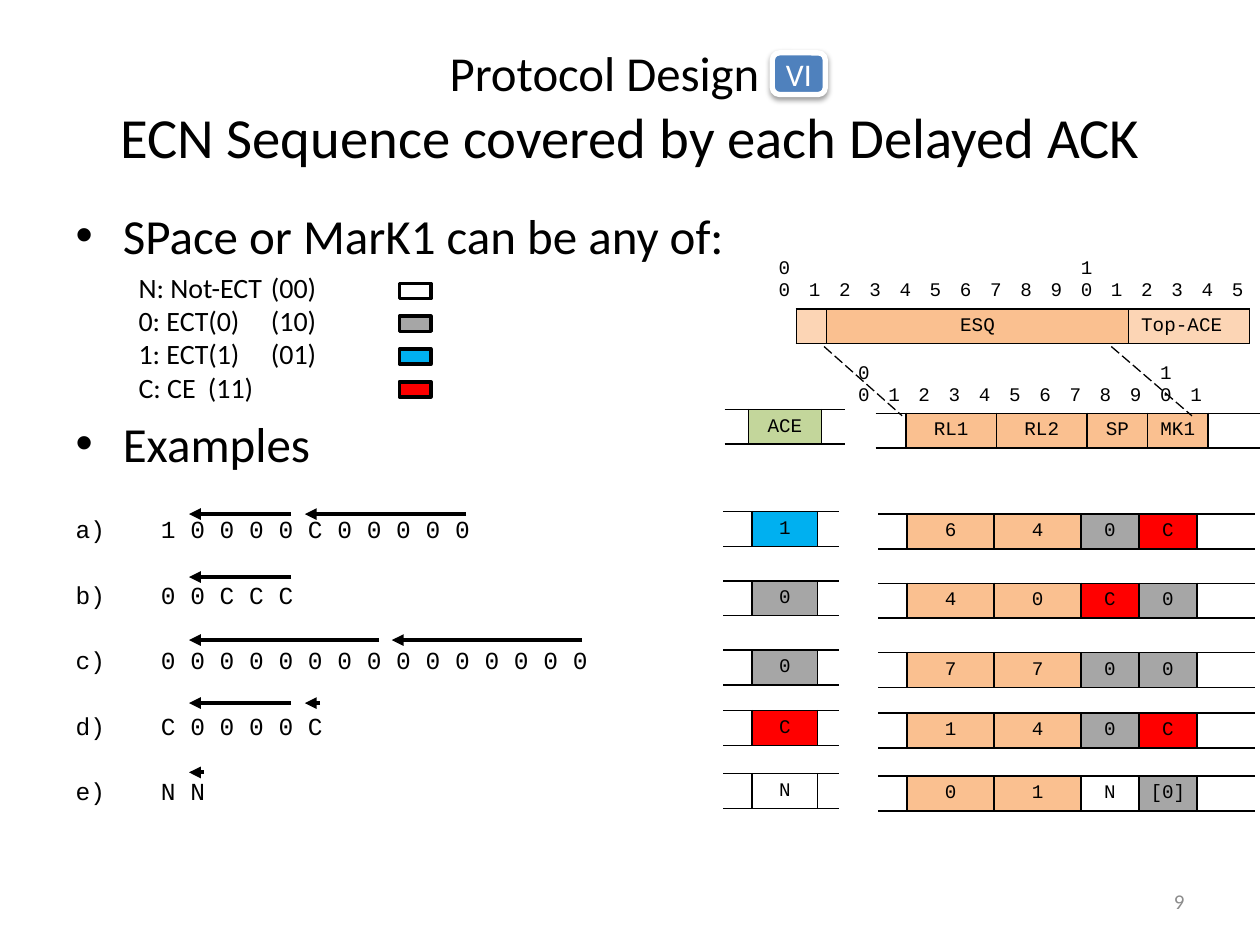
from dataclasses import dataclass

from lxml.etree import SubElement
from pptx import Presentation
from pptx.dml.color import RGBColor
from pptx.enum.dml import MSO_LINE
from pptx.enum.shapes import MSO_CONNECTOR, MSO_SHAPE
from pptx.enum.text import MSO_ANCHOR, MSO_AUTO_SIZE, PP_ALIGN
from pptx.oxml.ns import qn
from pptx.util import Inches, Pt

BLACK = RGBColor(0x00, 0x00, 0x00)
WHITE = RGBColor(0xFF, 0xFF, 0xFF)
GRAY = RGBColor(0xA6, 0xA6, 0xA6)
NUMBER_GRAY = RGBColor(0x8C, 0x8C, 0x8C)
BLUE = RGBColor(0x00, 0xB0, 0xF0)
RED = RGBColor(0xFF, 0x00, 0x00)
ORANGE = RGBColor(0xFA, 0xC0, 0x90)
PALE_ORANGE = RGBColor(0xFC, 0xD5, 0xB5)
GREEN = RGBColor(0xC3, 0xD6, 0x9B)
BADGE_BLUE = RGBColor(0x4F, 0x81, 0xBD)

COLUMNS, ROWS = 100, 75
PLAIN_TABLE = "{2D5ABB26-0587-4C30-8999-92F81FD0307C}"
MARK_COLORS = {"N": WHITE, "0": GRAY, "1": BLUE, "C": RED, "[0]": GRAY}
LEGEND = [("N: Not-ECT", "00", "N"), ("0: ECT(0)", "10", "0"),
          ("1: ECT(1)", "01", "1"), ("C: CE", "11", "C")]
EXAMPLES = [
    ("1 0 0 0 0 C 0 0 0 0 0", "1", ("6", "4", "0", "C"), 40.8, 40.8,
     [(37, 24.2), (23.1, 15)]),
    ("0 0 C C C", "0", ("4", "0", "C", "0"), 46.3, 45.8, [(23.1, 15)]),
    ("0 0 0 0 0 0 0 0 0 0 0 0 0 0 0", "0", ("7", "7", "0", "0"), 51.8, 50.8,
     [(46.2, 31.1), (30.1, 15)]),
    ("C 0 0 0 0 C", "C", ("1", "4", "0", "C"), 56.6, 55.8,
     [(23.1, 15), (25.4, 24.2)]),
    ("N N", "N", ("0", "1", "N", "[0]"), 61.6, 61.3, [(16.2, 15)]),
]


def apply(target, values):
    for name, value in values.items():
        setattr(target, name, value)


@dataclass
class Field:
    text: str = ""
    fill: RGBColor = None
    borders: str = ""
    span: int = 1
    align: PP_ALIGN = PP_ALIGN.CENTER
    anchor: MSO_ANCHOR = MSO_ANCHOR.TOP
    side_margin: float = 0.05


class ProtocolSlide:
    sans = "Calibri"
    mono = "Courier New"
    mono_size = 11

    def __init__(self, deck):
        self.slide = deck.slides.add_slide(deck.slide_layouts[1])
        self.column = deck.slide_width / COLUMNS
        self.row = deck.slide_height / ROWS

    def place(self, left, top, width, height):
        return (round(left * self.column), round(top * self.row),
                round(width * self.column), round(height * self.row))

    def add_text(self, paragraph, text, size, font=None, color=BLACK, **layout):
        run = paragraph.add_run()
        run.text = text
        apply(run.font, {"name": font or self.sans, "size": Pt(size)})
        run.font.color.rgb = color
        apply(paragraph, layout)

    def paragraphs(self, holder, area, lines):
        apply(holder, dict(zip(("left", "top", "width", "height"), self.place(*area))))
        frame = holder.text_frame
        apply(frame, {"auto_size": MSO_AUTO_SIZE.NONE, "word_wrap": True})
        for index, (text, size, options) in enumerate(lines):
            paragraph = frame.add_paragraph() if index else frame.paragraphs[0]
            self.add_text(paragraph, text, size, **options)
        return frame

    def indent(self, paragraph, hang, bullet, **settings):
        properties = paragraph._p.get_or_add_pPr()
        properties.set("marL", str(Inches(hang)))
        properties.set("indent", str(-Inches(hang)))
        SubElement(properties, qn(bullet), **settings)

    def label(self, area, text, size, color, align):
        box = self.slide.shapes.add_textbox(*self.place(*area))
        frame = self.paragraphs(box, area, [(text, size, {"color": color, "alignment": align})])
        frame.vertical_anchor = MSO_ANCHOR.MIDDLE

    def box(self, kind, area, fill, line, weight):
        shape = self.slide.shapes.add_shape(kind, *self.place(*area))
        shape.shadow.inherit = False
        shape.fill.solid()
        shape.fill.fore_color.rgb = fill
        shape.line.color.rgb = line
        shape.line.width = Pt(weight)
        return shape

    def badge(self, area, text):
        badge = self.box(MSO_SHAPE.ROUNDED_RECTANGLE, area, BADGE_BLUE, WHITE, 3)
        apply(badge.text_frame, {"word_wrap": False, "vertical_anchor": MSO_ANCHOR.MIDDLE})
        self.add_text(badge.text_frame.paragraphs[0], text, 18, color=WHITE,
                      alignment=PP_ALIGN.CENTER)
        effects = badge._element.spPr.find(qn("a:effectLst"))
        shadow = SubElement(effects, qn("a:outerShdw"), blurRad=str(Pt(3.1)),
                            dist=str(Pt(1.6)), dir="5400000", rotWithShape="0")
        tint = SubElement(shadow, qn("a:srgbClr"), val=str(BLACK))
        SubElement(tint, qn("a:alpha"), val="38000")

    def line(self, start, end, weight, dash=None, arrow=False):
        connector = self.slide.shapes.add_connector(
            MSO_CONNECTOR.STRAIGHT, *self.place(*start, *end))
        connector.line.color.rgb = BLACK
        apply(connector.line, {"width": Pt(weight), "dash_style": dash})
        if arrow:
            SubElement(connector.line._get_or_add_ln(), qn("a:tailEnd"), type="triangle")
        SubElement(connector._element.spPr, qn("a:effectLst"))

    def fill_field(self, cell, field):
        margin = Inches(field.side_margin)
        apply(cell, {"margin_left": margin, "margin_right": margin,
                     "vertical_anchor": field.anchor})
        paragraph = cell.text_frame.paragraphs[0]
        if field.text:
            self.add_text(paragraph, field.text, self.mono_size, self.mono,
                          alignment=field.align)
        else:
            SubElement(paragraph._p, qn("a:endParaRPr"), sz="1000")
        properties = cell._tc.get_or_add_tcPr()
        for side in "lrtb":
            if side in field.borders:
                border = SubElement(properties, qn(f"a:ln{side.upper()}"), w=str(Pt(1)))
                ink = SubElement(border, qn("a:solidFill"))
                SubElement(ink, qn("a:srgbClr"), val=str(BLACK))
        if field.fill is None:
            cell.fill.background()
        else:
            cell.fill.solid()
            cell.fill.fore_color.rgb = field.fill

    def table(self, left, top, widths, heights, rows):
        area = self.place(left, top, sum(widths), sum(heights))
        table = self.slide.shapes.add_table(len(heights), len(widths), *area).table
        apply(table, {"first_row": False, "horz_banding": False})
        table._tbl.tblPr.find(qn("a:tableStyleId")).text = PLAIN_TABLE
        for column, width in zip(table.columns, widths):
            column.width = round(width * self.column)
        for line, height in zip(table.rows, heights):
            line.height = round(height * self.row)
        for index, fields in enumerate(rows):
            position = 0
            for field in fields:
                cell = table.cell(index, position)
                if field.span > 1:
                    cell.merge(table.cell(index, position + field.span - 1))
                self.fill_field(cell, field)
                position += field.span

    def bit_ruler(self, left, top, bits, count, fields):
        header = [Field(f"{bit // 10}{bit % 10}" if bit % 10 == 0 else str(bit % 10),
                        borders="b" if bit else "", align=PP_ALIGN.LEFT,
                        anchor=MSO_ANCHOR.BOTTOM, side_margin=0.1)
                  if bit < bits else Field(borders="b") for bit in range(count)]
        self.table(left, top, [2.4] * count, [4.5, 2.7], [header, fields])


def main():
    deck = Presentation()
    apply(deck, {"slide_width": Inches(10), "slide_height": Inches(7.5)})
    page = ProtocolSlide(deck)
    title, body = page.slide.placeholders
    centered = {"alignment": PP_ALIGN.CENTER}
    heading = page.paragraphs(title, (5, 2.2, 90, 12.5), [
        ("Protocol Design VI", 27.9, centered),
        ("ECN Sequence covered by each Delayed ACK", 32.4, centered)])
    heading.vertical_anchor = MSO_ANCHOR.MIDDLE

    legend = [(f"\t{name}\t ({code})", 16,
               {"space_before": Pt(0 if index else 3.8), "line_spacing": Pt(19)})
              for index, (name, code, _) in enumerate(LEGEND)]
    sequences = [(f" {example[0]}", 14,
                  {"font": page.mono, "space_before": Pt(20.6 if index else 24)})
                 for index, example in enumerate(EXAMPLES)]
    topics = [("SPace or MarK1 can be any of:", 28, {"space_before": Pt(0)}), *legend,
              ("Examples", 28, {"space_before": Pt(5.6)}), *sequences]
    listing = page.paragraphs(body, (5, 15.8, 92.5, 52.7), topics).paragraphs
    first_sequence = len(topics) - len(sequences)
    for paragraph in listing[1:len(LEGEND) + 1]:
        page.indent(paragraph, 0, "a:buNone")
    for paragraph in listing[first_sequence:]:
        page.indent(paragraph, 0.56, "a:buAutoNum", type="alphaLcParenR")

    blank, lead, trail = Field(), Field(borders="trb"), Field(borders="ltb")
    page.bit_ruler(67.1, 28.3, 12, 14, [
        blank, lead,
        *[Field(name, ORANGE, "lrtb", span)
          for name, span in (("RL1", 3), ("RL2", 3), ("SP", 2), ("MK1", 2))],
        Field(borders="ltb", span=2)])
    page.bit_ruler(60.8, 20, 16, 16, [
        Field(borders="r"), Field("", PALE_ORANGE, "lrtb"),
        Field("ESQ", ORANGE, "lrtb", 10),
        Field("Top-ACE", PALE_ORANGE, "lrtb", 4, PP_ALIGN.LEFT, side_margin=0.1)])
    for start, end in ((65.4, 71.6), (88.2, 94.6)):
        page.line((start, 27.5), (end, 33), 0.75, MSO_LINE.LONG_DASH)

    for index, (_, _, mark) in enumerate(LEGEND):
        page.box(MSO_SHAPE.RECTANGLE, (31.7, 22.5 + 2.6 * index, 2.5, 1.2),
                 MARK_COLORS[mark], BLACK, 2)

    for _, ace, values, top, arrow_top, arrows in EXAMPLES:
        fills = [ORANGE, ORANGE, *[MARK_COLORS[mark] for mark in values[2:]]]
        page.table(67.4, top, [2.3, 2.3, 6.9, 6.9, 4.6, 4.6, 4.6], [2.7], [[
            blank, lead,
            *[Field(value, fill, "lrtb") for value, fill in zip(values, fills)], trail]])
        page.table(55.1, top - 0.2, [2.3, 2.3, 5.2, 1.7], [2.7],
                   [[blank, lead, Field(ace, MARK_COLORS[ace], "lrtb"), trail]])
        for start, end in arrows:
            page.line((start, arrow_top), (end, arrow_top), 2.25, arrow=True)

    page.table(57.5, 32.5, [1.9, 5.8, 1.9], [2.7], [[
        lead, Field("ACE", GREEN, "lrtb", anchor=MSO_ANCHOR.MIDDLE), trail]])
    page.label((71.7, 69.5, 23.3, 4), "9", 12, NUMBER_GRAY, PP_ALIGN.RIGHT)
    page.badge((61.3, 4.2, 4.2, 3.3), "VI")
    deck.save("out.pptx")


if __name__ == "__main__":
    main()
